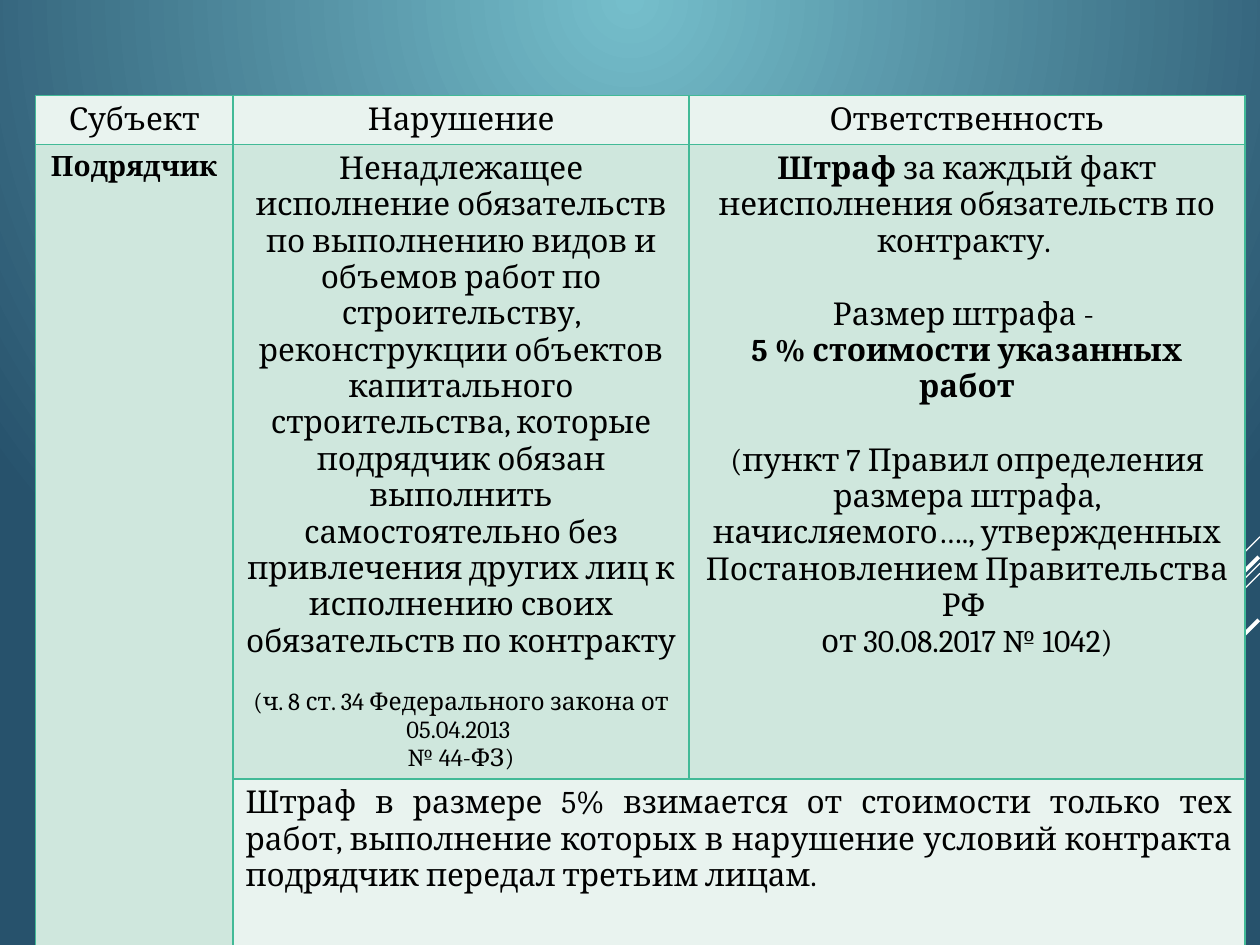
from lxml import etree
from pptx import Presentation
from pptx import util as u
from pptx.dml.color import RGBColor
from pptx.enum import shapes, text
from pptx.oxml import ns

WIDE, HIGH = 10, 7.5
FONT = "Cambria"
BLACK = RGBColor(0, 0, 0)
WHITE = RGBColor(255, 255, 255)
PALE = RGBColor(0xE9, 0xF3, 0xEF)
MINT = RGBColor(0xCF, 0xE7, 0xDD)
GREEN = RGBColor(0x42, 0xBA, 0x97)
SKY = RGBColor(0x75, 0xBE, 0xCB)
NAVY = RGBColor(0x27, 0x52, 0x6C)
MID, JUST = text.PP_ALIGN.CENTER, text.PP_ALIGN.JUSTIFY

# left, top, run (equal to fall), weight; each stroke rises to the right
STROKES = [(9.17, 5.09, 0.83, 0.75), (7.3, 7.17, 2.7, 0.75), (8.28, 6.27, 1.72, 0.75),
           (8.42, 5.99, 1.57, 2.25), (8.85, 6.06, 1.14, 2.25)]
COLS = [1.57, 3.62, 4.41]
ROWS = [0.34, 3.72, 1.84]

HEADS = ["Субъект", "Нарушение", "Ответственность"]
BREACH = ("Ненадлежащее исполнение обязательств по выполнению видов и объемов работ "
          "по строительству, реконструкции объектов капитального строительства, "
          "которые подрядчик обязан выполнить самостоятельно без привлечения других "
          "лиц к исполнению своих обязательств по контракту")
LAW = "(ч. 8 ст. 34 Федерального закона от 05.04.2013 \n№ 44-ФЗ)"
RULE = ("(пункт 7 Правил определения размера штрафа, начисляемого…., утвержденных "
        "Постановлением Правительства РФ \nот 30.08.2017 № 1042)")
NOTE = ("Штраф в размере 5% взимается от стоимости только тех работ, выполнение "
        "которых в нарушение условий контракта подрядчик передал третьим лицам.")


def write(para, words, size=18, bold=False, align=MID, gap=0):
    """Add a run to the paragraph; a newline in words becomes a line break."""
    para.alignment = align
    para.space_before = u.Pt(gap)
    for i, line in enumerate(words.split("\n")):
        if i:
            para.add_line_break()
        run = para.add_run()
        run.text = line
        font = run.font
        font.name, font.size, font.bold = FONT, u.Pt(size), bold
        font.color.rgb = BLACK


def paint(slide):
    """Fill the background with a glow from the top centre."""
    fill = slide.background.fill
    fill.gradient()
    for stop, color, place in zip(fill.gradient_stops, (SKY, NAVY), (0, 1)):
        stop.color.rgb = color
        stop.position = place
    grad = next(slide.element.iter(ns.qn("a:gradFill")))
    grad.remove(grad.find(ns.qn("a:lin")))
    glow = etree.SubElement(grad, ns.qn("a:path"), path="circle")
    etree.SubElement(glow, ns.qn("a:fillToRect"), b="100000")


def streaks(slide):
    for left, low, run, weight in STROKES:
        ends = [u.Inches(n) for n in (left + run, low - run, left, low)]
        line = slide.shapes.add_connector(shapes.MSO_CONNECTOR.STRAIGHT, *ends)
        line.line.color.rgb = WHITE
        line.line.width = u.Pt(weight)
        etree.SubElement(line.element.spPr, ns.qn("a:effectLst"))


def dress(cell, color):
    """Give a cell its borders and fill."""
    props = cell._tc.get_or_add_tcPr()
    for side in ("lnL", "lnR", "lnT", "lnB"):
        edge = etree.SubElement(props, ns.qn("a:" + side), w=str(u.Pt(1)))
        solid = etree.SubElement(edge, ns.qn("a:solidFill"))
        etree.SubElement(solid, ns.qn("a:srgbClr"), val=str(GREEN))
    cell.fill.solid()
    cell.fill.fore_color.rgb = color


def grid(slide, left, top):
    box = [u.Inches(n) for n in (left, top, sum(COLS), sum(ROWS))]
    table = slide.shapes.add_table(len(ROWS), len(COLS), *box).table
    for col, width in zip(table.columns, COLS):
        col.width = u.Inches(width)
    for row, height in zip(table.rows, ROWS):
        row.height = u.Inches(height)
    for r in range(len(ROWS)):
        for c in range(len(COLS)):
            dress(table.cell(r, c), MINT if r == 1 or (r and not c) else PALE)
    table.cell(1, 0).merge(table.cell(2, 0))
    table.cell(2, 1).merge(table.cell(2, 2))
    return table


def fill_in(table):
    for c, head in enumerate(HEADS):
        write(table.cell(0, c).text_frame.paragraphs[0], head)
    write(table.cell(1, 0).text_frame.paragraphs[0], "Подрядчик", size=16, bold=True)

    frame = table.cell(1, 1).text_frame
    write(frame.paragraphs[0], BREACH)
    write(frame.add_paragraph(), LAW, size=14, gap=16)

    frame = table.cell(1, 2).text_frame
    first = frame.paragraphs[0]
    write(first, "Штраф", bold=True)
    write(first, " за каждый факт неисполнения обязательств по контракту. ")
    write(frame.add_paragraph(), "Размер штрафа - ", gap=21)
    write(frame.add_paragraph(), "5 % стоимости указанных работ", bold=True)
    write(frame.add_paragraph(), RULE, gap=21)

    write(table.cell(2, 1).text_frame.paragraphs[0], NOTE, align=JUST)


def main():
    deck = Presentation()
    deck.slide_width, deck.slide_height = u.Inches(WIDE), u.Inches(HIGH)
    slide = deck.slides.add_slide(deck.slide_layouts[6])
    paint(slide)
    streaks(slide)
    fill_in(grid(slide, 0.28, 0.76))
    deck.save("out.pptx")


if __name__ == "__main__":
    main()
